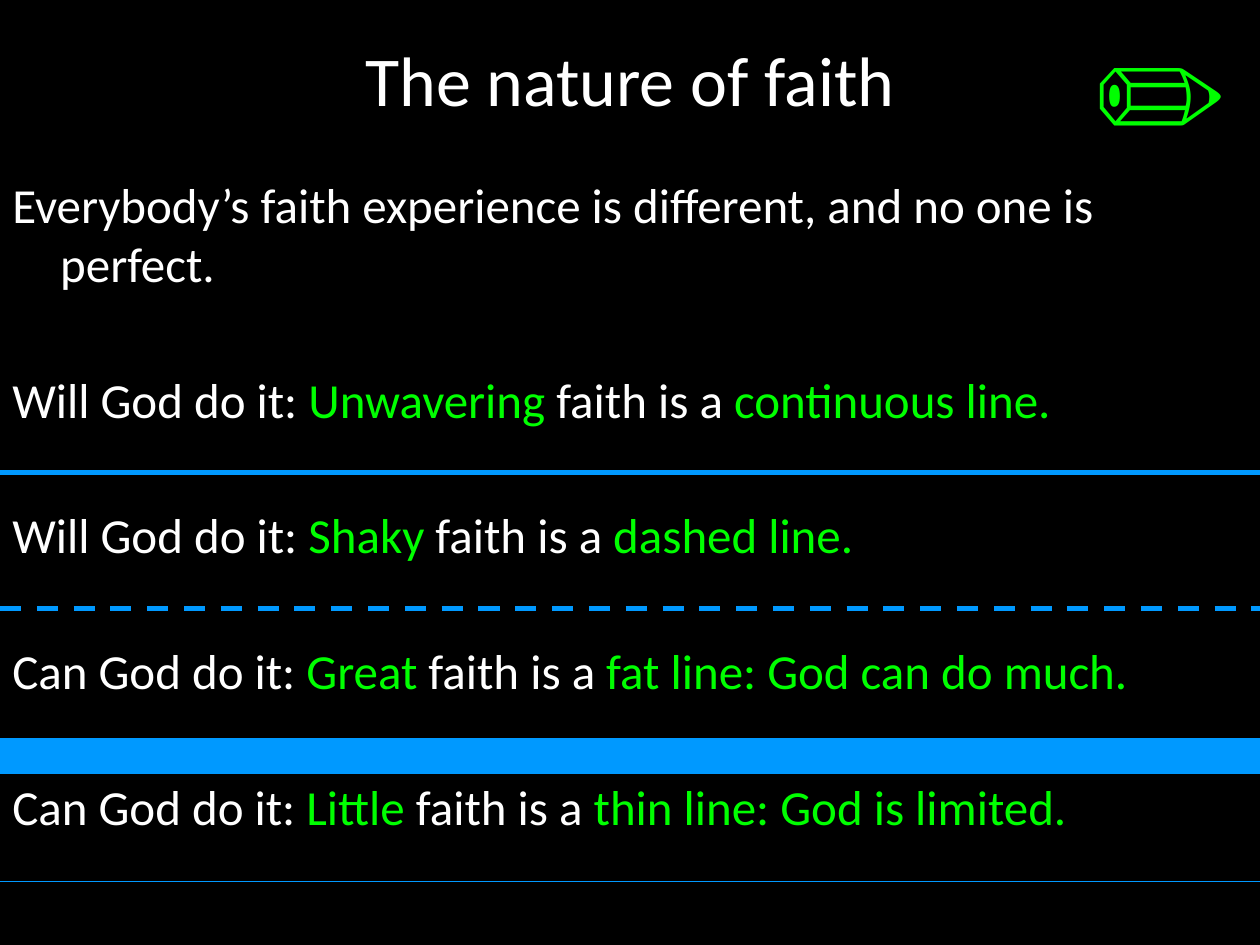
"""Build a slide that likens kinds of faith to kinds of lines."""
from dataclasses import dataclass

from lxml.etree import SubElement
from pptx import Presentation
from pptx.dml.color import RGBColor as Rgb
from pptx.enum.dml import MSO_LINE_DASH_STYLE as Dash
from pptx.enum.shapes import MSO_CONNECTOR as Connector
from pptx.enum.text import MSO_ANCHOR as Anchor, PP_ALIGN as Align
from pptx.oxml.ns import qn
from pptx.util import Inches, Pt


@dataclass(frozen=True)
class Theme:
    """Colours, fonts, type sizes and spacing in points."""
    back: Rgb = Rgb(0, 0, 0)
    text: Rgb = Rgb(255, 255, 255)
    accent: Rgb = Rgb(0, 255, 0)
    line: Rgb = Rgb(0, 153, 255)
    font: str = "Calibri"
    icon_font: str = "Times New Roman"
    title_size: int = 40
    body_size: int = 28
    icon_size: int = 80
    first_gap: int = 5
    gap: int = 44
    hang: float = 0.38


class SlideBuilder:
    """Draws elements on one slide, placed by shares of its size."""

    def __init__(self, deck, theme):
        """Add a blank page with the theme's background."""
        self.theme = theme
        self.width, self.height = deck.slide_width, deck.slide_height
        self.page = deck.slides.add_slide(deck.slide_layouts[6])
        fill = self.page.background.fill
        fill.solid()
        fill.fore_color.rgb = theme.back

    def frame(self, left, top, width, height, anchor=Anchor.TOP):
        """Add a wrapping text box and return its frame."""
        box = self.page.shapes.add_textbox(
            round(left * self.width), round(top * self.height),
            round(width * self.width), round(height * self.height))
        box.text_frame.word_wrap = True
        box.text_frame.vertical_anchor = anchor
        return box.text_frame

    def span(self, para, text, size, color, font):
        """Add one styled run."""
        span = para.add_run()
        span.text = text
        span.font.size = Pt(size)
        span.font.name = font
        span.font.color.rgb = color

    def label(self, area, text, size, color, font):
        """Add a single centred line of text."""
        para = self.frame(*area, Anchor.MIDDLE).paragraphs[0]
        para.alignment = Align.CENTER
        self.span(para, text, size, color, font)

    def body(self, area, paragraphs):
        """Add hanging paragraphs whose runs alternate text and accent."""
        theme = self.theme
        frame = self.frame(*area)
        for index, runs in enumerate(paragraphs):
            para = frame.add_paragraph() if index else frame.paragraphs[0]
            para.space_before = Pt(theme.gap if index else theme.first_gap)
            props = para._p.get_or_add_pPr()
            props.set("marL", str(Inches(theme.hang)))
            props.set("indent", str(-Inches(theme.hang)))
            for place, text in enumerate(runs):
                color = theme.accent if place % 2 else theme.text
                self.span(para, text, theme.body_size, color, theme.font)

    def rule(self, top, weight, dash=None):
        """Add a line across the full width."""
        level = round(top * self.height)
        rule = self.page.shapes.add_connector(
            Connector.STRAIGHT, 0, level, self.width, level)
        rule.line.color.rgb = self.theme.line
        rule.line.width = Pt(weight)
        if dash:
            rule.line.dash_style = dash
        SubElement(rule._element.spPr, qn("a:effectLst"))


def main():
    """Build and save the deck."""
    deck = Presentation()
    deck.slide_width, deck.slide_height = Inches(10), Inches(7.5)
    theme = Theme()
    slide = SlideBuilder(deck, theme)

    slide.label((0, 0, 1, 1 / 6), "The nature of faith",
                theme.title_size, theme.text, theme.font)
    kinds = [
        ("Will", "Unwavering ", "continuous line."),
        ("Will", "Shaky ", "dashed line."),
        ("Can", "Great ", "fat line: God can do much."),
        ("Can", "Little ", "thin line: God is limited."),
    ]
    intro = "Everybody’s faith experience is different, and no one is perfect."
    slide.body((0, 0.178, 1, 0.822), [(intro,)] + [
        (f"{verb} God do it: ", kind, "faith is a ", line)
        for verb, kind, line in kinds])
    slide.label((0.842, 0, 0.158, 0.19), "✏",
                theme.icon_size, theme.accent, theme.icon_font)

    rules = [(0.5, 3, None), (0.644, 3, Dash.DASH),
             (0.8, 20, None), (0.933, 0.25, None)]
    for top, weight, dash in rules:
        slide.rule(top, weight, dash)
    deck.save("out.pptx")


if __name__ == "__main__":
    main()
